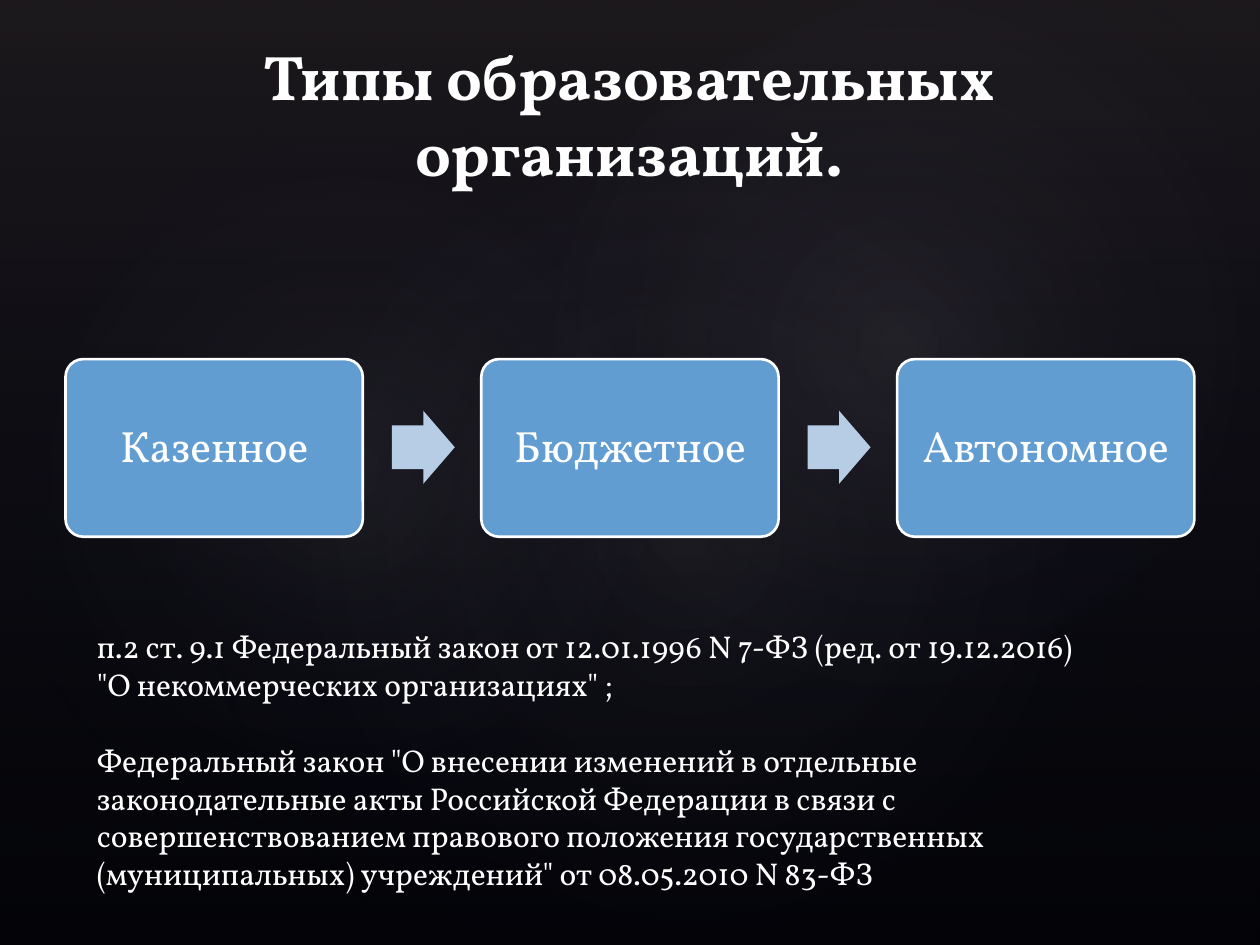
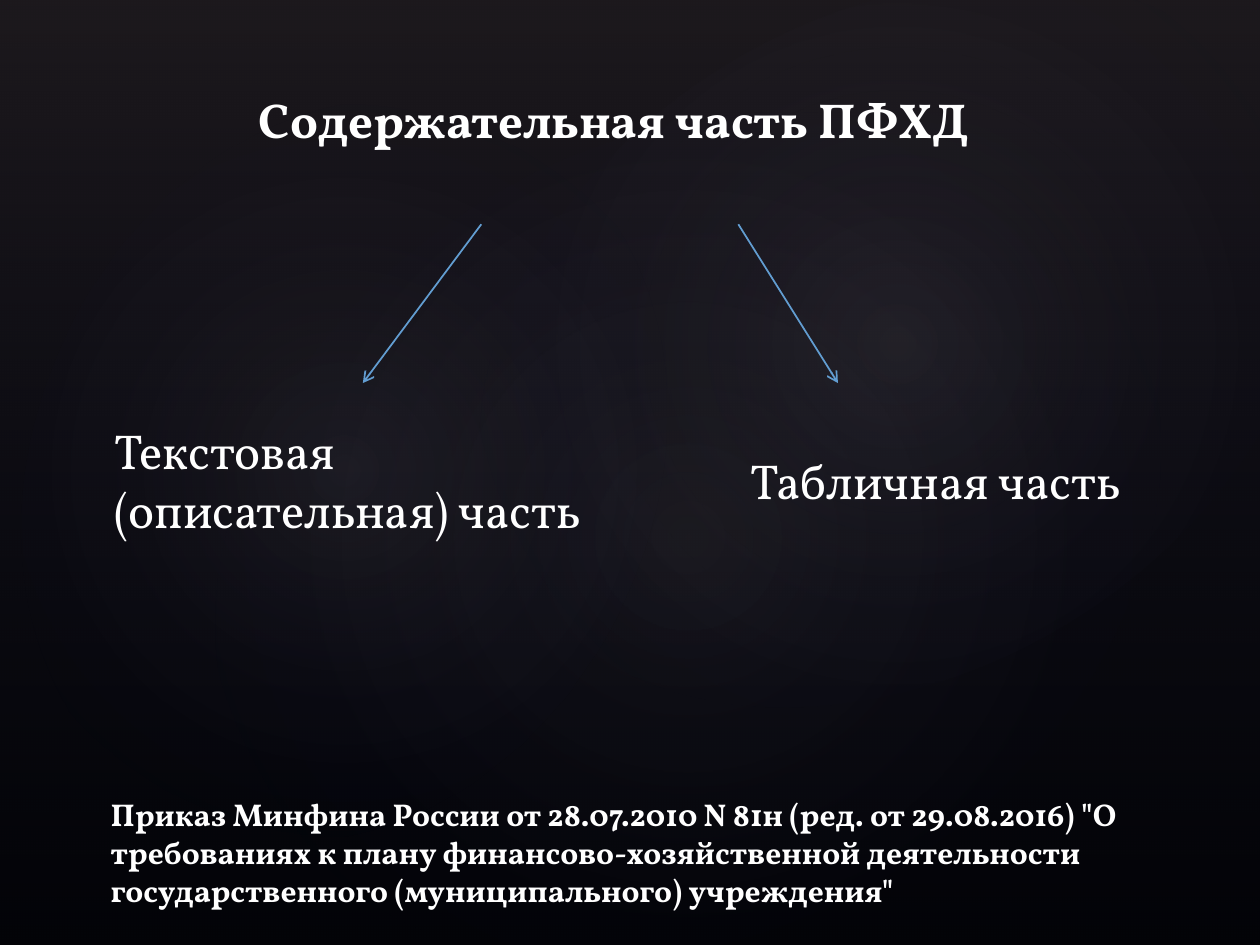
"""Two dark slides on the types of educational organisations and the plan's contents."""
import dataclasses

import pptx
import pptx.dml.color
import pptx.enum.shapes
import pptx.enum.text
import pptx.oxml
import pptx.oxml.ns
import pptx.util
from lxml import etree

SHAPES = pptx.enum.shapes.MSO_SHAPE
ALIGN = pptx.enum.text.PP_ALIGN
ANCHOR = pptx.enum.text.MSO_ANCHOR
WIDTH, HEIGHT = pptx.util.Inches(10), pptx.util.Inches(7.5)
COLUMNS, ROWS = 100, 75


@dataclasses.dataclass(frozen=True)
class Theme:
    """Colours, font and type sizes of the deck."""
    font: str = "Vollkorn"
    ground: str = "000000"
    veil: str = "504652"
    night: str = "242852"
    glow: str = "C4BCC6"
    ink: str = "FFFFFF"
    accent: str = "629DD1"
    pale: str = "B7CCE5"
    title: int = 36
    heading: int = 28
    step: int = 25
    source: int = 18


THEME = Theme()


def rgb(code):
    """Turn a hex code into a colour."""
    return pptx.dml.color.RGBColor.from_string(code)


def column(count):
    """Length of a number of grid columns."""
    return round(WIDTH * count / COLUMNS)


def row(count):
    """Length of a number of grid rows."""
    return round(HEIGHT * count / ROWS)


def area(left, top, width, height):
    """Turn grid units into left, top, width and height."""
    return column(left), row(top), column(width), row(height)


def write(frame, paragraphs, size, bold=False, align=ALIGN.LEFT, anchor=ANCHOR.TOP):
    """Fill a text frame with (text, space before) paragraphs."""
    frame.word_wrap = True
    frame.vertical_anchor = anchor
    for index, (text, space) in enumerate(paragraphs):
        paragraph = frame.add_paragraph() if index else frame.paragraphs[0]
        paragraph.alignment = align
        paragraph.space_before = pptx.util.Pt(space)
        run = paragraph.add_run()
        run.text = text
        run.font.name = THEME.font
        run.font.size = pptx.util.Pt(size)
        run.font.bold = bold
        run.font.color.rgb = rgb(THEME.ink)


def add_text(slide, place, paragraphs, size, **style):
    """Add a text box."""
    write(slide.shapes.add_textbox(*area(*place)).text_frame, paragraphs, size, **style)


def add_title(slide, left, top, text, size):
    """Add a centred bold title that stands on its lower edge."""
    add_text(slide, (left, top, 91.3, 7.9), [(text, 0)], size,
             bold=True, align=ALIGN.CENTER, anchor=ANCHOR.BOTTOM)


def add_shape(slide, kind, place):
    """Add a preset shape without shadow or outline."""
    shape = slide.shapes.add_shape(kind, *area(*place))
    shape.shadow.inherit = False
    shape.line.fill.background()
    return shape


def add_haze(slide, kind, place, stops, direction, rotation=0):
    """Add a shape with a translucent gradient of (position, colour, opacity) stops."""
    haze = add_shape(slide, kind, place)
    haze.rotation = rotation
    colours = "".join(
        f'<a:gs pos="{position * 1000}"><a:srgbClr val="{colour}">'
        f'<a:alpha val="{opacity * 1000}"/></a:srgbClr></a:gs>'
        for position, colour, opacity in stops)
    gradient = pptx.oxml.parse_xml(
        f'<a:gradFill {pptx.oxml.ns.nsdecls("a")} rotWithShape="1">'
        f'<a:gsLst>{colours}</a:gsLst>{direction}</a:gradFill>')
    haze._element.spPr.find(pptx.oxml.ns.qn("a:prstGeom")).addnext(gradient)


def add_backdrop(slide):
    """Lay the black ground, the veil and three soft glows."""
    slide.background.fill.solid()
    slide.background.fill.fore_color.rgb = rgb(THEME.ground)
    add_haze(slide, SHAPES.RECTANGLE, (0, 0, COLUMNS, ROWS),
             [(0, THEME.veil, 36), (100, THEME.night, 10)],
             '<a:lin ang="5400000" scaled="0"/>')
    centre = ('<a:path path="circle">'
              '<a:fillToRect l="50000" t="50000" r="50000" b="50000"/></a:path>')
    for place, opacity, rotation in [((15, 11.4, 79.2, 62.4), 7, 328.7),
                                     ((-3, 12.8, 60.6, 49), 8, 294.3),
                                     ((35.8, 1.3, 70.9, 52), 8, 328.7)]:
        add_haze(slide, SHAPES.OVAL, place,
                 [(0, THEME.glow, opacity), (58, THEME.night, 0)], centre, rotation)


def add_step(slide, left, text):
    """Add a rounded box of the process."""
    box = add_shape(slide, SHAPES.ROUNDED_RECTANGLE, (left, 28.5, 23.6, 14.1))
    box.adjustments[0] = 0.1
    box.fill.solid()
    box.fill.fore_color.rgb = rgb(THEME.accent)
    box.line.color.rgb = rgb(THEME.ink)
    box.line.width = pptx.util.Pt(1.5)
    frame = box.text_frame
    frame.margin_left = frame.margin_right = column(1)
    write(frame, [(text, 0)], THEME.step, align=ALIGN.CENTER, anchor=ANCHOR.MIDDLE)
    frame.paragraphs[0].line_spacing = 0.9


def add_step_arrow(slide, left):
    """Add a block arrow between two boxes."""
    arrow = add_shape(slide, SHAPES.RIGHT_ARROW, (left, 32.6, 5, 5.8))
    arrow.adjustments[0] = 0.6
    arrow.fill.solid()
    arrow.fill.fore_color.rgb = rgb(THEME.pale)


def add_process(slide, steps, left=5.2, pitch=33, arrow_offset=25.9):
    """Add evenly spaced boxes with an arrow after all but the last."""
    for index, text in enumerate(steps):
        start = left + index * pitch
        add_step(slide, start, text)
        if index < len(steps) - 1:
            add_step_arrow(slide, start + arrow_offset)


def add_branch(slide, start, end):
    """Add a thin line with an open arrowhead from the heading to a part."""
    branch = slide.shapes.add_connector(
        pptx.enum.shapes.MSO_CONNECTOR.STRAIGHT,
        column(start), row(17.8), column(end), row(30.4))
    branch.line.color.rgb = rgb(THEME.accent)
    branch.line.width = pptx.util.Pt(1)
    etree.SubElement(branch.line._get_or_add_ln(), pptx.oxml.ns.qn("a:tailEnd"), type="arrow")
    etree.SubElement(branch._element.spPr, pptx.oxml.ns.qn("a:effectLst"))


def build_types(slide):
    """Show the three types of organisation and the laws behind them."""
    add_title(slide, 4.3, 7.6, "Типы образовательных организаций.", THEME.title)
    add_text(slide, (6.7, 49.3, 86.6, 22.2), [
        ("п.2 ст. 9.1 Федеральный закон от 12.01.1996 N 7-ФЗ (ред. от 19.12.2016)", 0),
        ('"О некоммерческих организациях" ;', 0),
        ('Федеральный закон "О внесении изменений в отдельные законодательные акты '
         "Российской Федерации в связи с совершенствованием правового положения "
         'государственных (муниципальных) учреждений" от 08.05.2010 N 83-ФЗ', 21.6),
    ], THEME.source)
    add_process(slide, ["Казенное", "Бюджетное", "Автономное"])


def build_contents(slide):
    """Show the two parts of the plan and the order behind them."""
    add_title(slide, 3.1, 4.4, "Содержательная часть ПФХД", THEME.heading)
    add_text(slide, (7.8, 62.6, 86.6, 10.1), [
        ('Приказ Минфина России от 28.07.2010 N 81н (ред. от 29.08.2016) "О требованиях '
         "к плану финансово-хозяйственной деятельности государственного "
         '(муниципального) учреждения"', 0),
    ], THEME.source, bold=True)
    add_text(slide, (8.1, 32.9, 43.1, 10.4),
             [("Текстовая (описательная) часть", 0)], THEME.heading)
    add_text(slide, (58.6, 35.3, 35.1, 5.7), [("Табличная часть", 0)], THEME.heading)
    add_branch(slide, 38.2, 28.8)
    add_branch(slide, 58.6, 66.5)


def main():
    """Build and save the deck."""
    deck = pptx.Presentation()
    deck.slide_width, deck.slide_height = WIDTH, HEIGHT
    for build in (build_types, build_contents):
        slide = deck.slides.add_slide(deck.slide_layouts[6])
        add_backdrop(slide)
        build(slide)
    deck.save("out.pptx")


if __name__ == "__main__":
    main()
